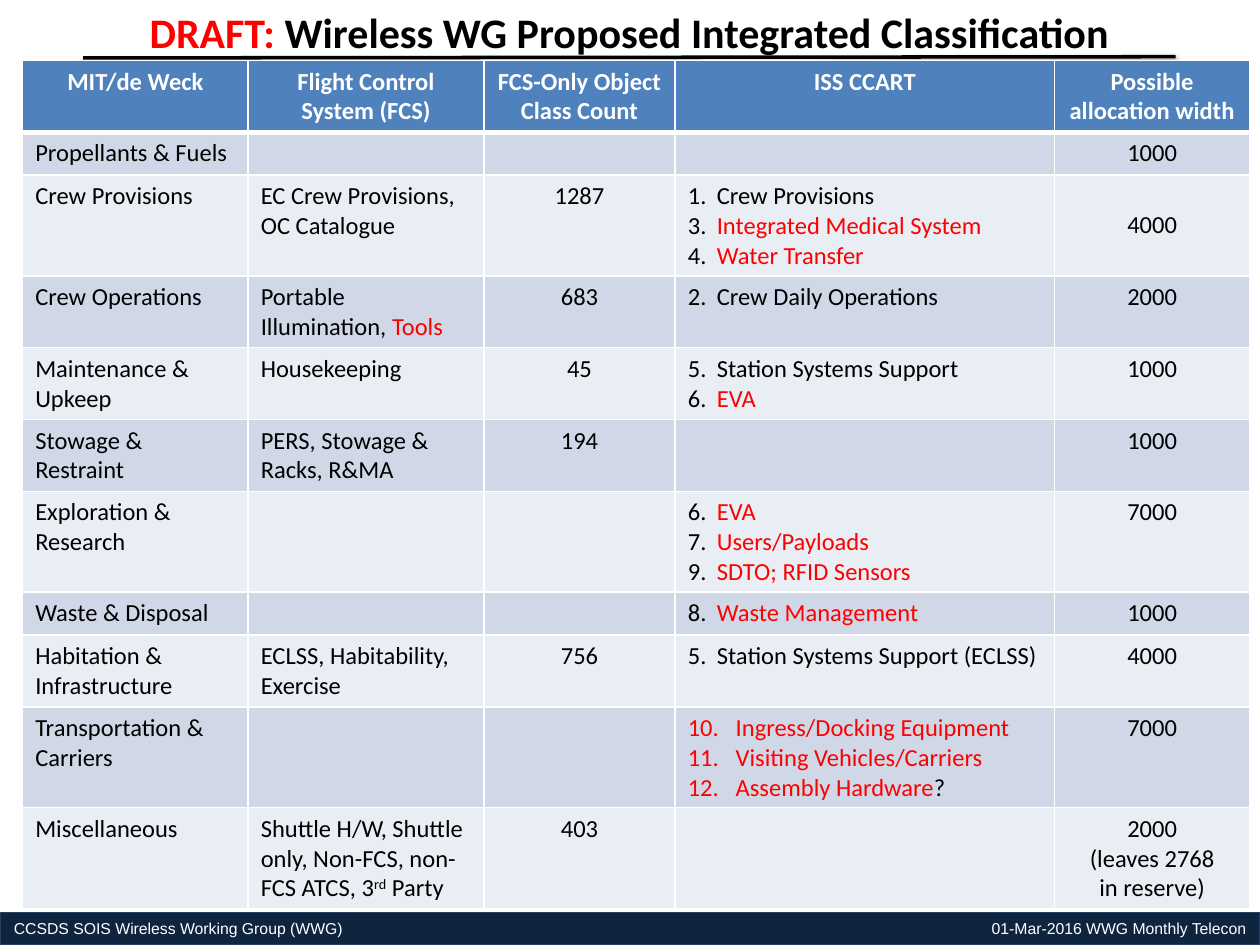
"""Build the slide that proposes an integrated wireless classification."""
from lxml.etree import SubElement
from pptx import Presentation
from pptx.dml.color import RGBColor
from pptx.enum.shapes import MSO_CONNECTOR, MSO_SHAPE
from pptx.enum.text import MSO_ANCHOR, PP_ALIGN
from pptx.oxml import parse_xml
from pptx.oxml.ns import nsdecls, qn
from pptx.util import Inches, Pt

BLACK = RGBColor(0x00, 0x00, 0x00)
WHITE = RGBColor(0xFF, 0xFF, 0xFF)
RED = RGBColor(0xFF, 0x00, 0x00)
NAVY = RGBColor(0x0F, 0x24, 0x3E)
NAVY_EDGE = RGBColor(0x25, 0x40, 0x61)
HEADER_BLUE = RGBColor(0x4F, 0x81, 0xBD)
BANDS = [RGBColor(0xE9, 0xED, 0xF4), RGBColor(0xD0, 0xD8, 0xE8)]

WIDTH, HEIGHT = Inches(10), Inches(7.5)
COLUMN_WIDTHS = [1.79, 1.87, 1.52, 3.01, 1.55]
COUNT, CCART, ALLOCATION = 2, 3, 4
LINE_HEIGHT, CELL_MARGIN = 0.23, 0.05
RED_MARK, SUPER_MARK = "!", "^"

HEADER = ["MIT/de Weck", "Flight Control System (FCS)", "FCS-Only Object Class Count",
          "ISS CCART", "Possible allocation width"]
ROWS = [
    (2, HEADER),
    (1, ["Propellants & Fuels", "", "", "", "1000"]),
    (3, ["Crew Provisions", "EC Crew Provisions, OC Catalogue", "1287",
         "1.\tCrew Provisions\n3.\t|!Integrated Medical System\n4.\t|!Water Transfer", "4000"]),
    (2, ["Crew Operations", "Portable Illumination, |!Tools", "683",
         "2.\tCrew Daily Operations", "2000"]),
    (2, ["Maintenance & Upkeep", "Housekeeping", "45",
         "5.\tStation Systems Support\n6.\t|!EVA", "1000"]),
    (2, ["Stowage & Restraint", "PERS, Stowage & Racks, R&MA", "194", "", "1000"]),
    (3, ["Exploration & Research", "", "",
         "6.\t|!EVA\n7.\t|!Users/Payloads\n9.\t|!SDTO; RFID Sensors", "7000"]),
    (1, ["Waste & Disposal", "", "", "8.\t|!Waste Management", "1000"]),
    (2, ["Habitation & Infrastructure", "ECLSS, Habitability, Exercise", "756",
         "5.\tStation Systems Support (ECLSS)", "4000"]),
    (3, ["Transportation & Carriers", "", "",
         "!Ingress/Docking Equipment\n!Visiting Vehicles/Carriers\n!Assembly Hardware|?", "7000"]),
    (3, ["Miscellaneous", "Shuttle H/W, Shuttle only, Non-FCS, non-FCS ATCS, 3|^rd| Party",
         "403", "", "2000\n(leaves 2768\nin reserve)"]),
]


def add_runs(paragraph, marked_text, size, color, bold=False, font="Calibri"):
    for piece in marked_text.split("|"):
        run = paragraph.add_run()
        run.text = piece.lstrip(RED_MARK + SUPER_MARK)
        run.font.name, run.font.size, run.font.bold = font, Pt(size), bold
        run.font.color.rgb = RED if piece.startswith(RED_MARK) else color
        if piece.startswith(SUPER_MARK):
            run.font._element.set("baseline", "30000")


def add_tab(paragraph, inches, alignment):
    tabs = SubElement(paragraph._p.get_or_add_pPr(), qn("a:tabLst"))
    SubElement(tabs, qn("a:tab"), pos=str(Inches(inches)), algn=alignment)


presentation = Presentation()
presentation.slide_width, presentation.slide_height = WIDTH, HEIGHT
slide = presentation.slides.add_slide(presentation.slide_layouts[6])

footer_height = Inches(0.26)
footer = slide.shapes.add_shape(MSO_SHAPE.RECTANGLE, 0, HEIGHT - footer_height, WIDTH, footer_height)
footer.shadow.inherit = False
footer.fill.solid()
footer.fill.fore_color.rgb = NAVY
footer.line.color.rgb = NAVY_EDGE
footer.line.width = Pt(0.75)
footer_frame = footer.text_frame
footer_frame.margin_left = footer_frame.margin_right = Inches(0.11)
footer_frame.margin_top = footer_frame.margin_bottom = Inches(0.06)
footer_frame.vertical_anchor = MSO_ANCHOR.MIDDLE
footer_line = footer_frame.paragraphs[0]
footer_line.alignment = PP_ALIGN.LEFT
add_tab(footer_line, 9.78, "r")
add_runs(footer_line, "CCSDS SOIS Wireless Working Group (WWG)\t01-Mar-2016 WWG Monthly Telecon",
         9, WHITE, font="Arial")

title = slide.shapes.add_textbox(Inches(1.06), 0, Inches(7.87), Inches(0.5))
title.text_frame.word_wrap = False
title_line = title.text_frame.paragraphs[0]
title_line.alignment = PP_ALIGN.CENTER
add_runs(title_line, "!DRAFT: |Wireless WG Proposed Integrated Classification", 24, BLACK, True)

underline = slide.shapes.add_connector(
    MSO_CONNECTOR.STRAIGHT, Inches(0.66), Inches(0.46), Inches(9.33), Inches(0.45))
underline.line.color.rgb = BLACK
underline.line.width = Pt(2)
underline._element.spPr.append(parse_xml(
    f'<a:effectLst {nsdecls("a")}><a:outerShdw blurRad="{Pt(3.1)}" dist="{Pt(1.6)}" dir="5400000" '
    'rotWithShape="0"><a:srgbClr val="000000"><a:alpha val="38000"/></a:srgbClr>'
    '</a:outerShdw></a:effectLst>'))

table = slide.shapes.add_table(
    len(ROWS), len(COLUMN_WIDTHS), Inches(0.18), Inches(0.48), Inches(9.73), Inches(6.72)).table
table.horz_banding = False
for column, width in zip(table.columns, COLUMN_WIDTHS):
    column.width = Inches(width)

for row_index, (line_count, texts) in enumerate(ROWS):
    is_header = row_index == 0
    row = table.rows[row_index]
    row.height = Inches(2 * CELL_MARGIN + LINE_HEIGHT * line_count + 0.01)
    for column_index, (cell, text) in enumerate(zip(row.cells, texts)):
        cell.fill.solid()
        cell.fill.fore_color.rgb = HEADER_BLUE if is_header else BANDS[row_index % 2]
        if texts[0] == "Crew Provisions" and column_index == ALLOCATION:
            cell.margin_top = Inches(CELL_MARGIN + LINE_HEIGHT)
        for line_index, line in enumerate(text.split("\n")):
            frame = cell.text_frame
            paragraph = frame.add_paragraph() if line_index else frame.paragraphs[0]
            if is_header or column_index in (COUNT, ALLOCATION):
                paragraph.alignment = PP_ALIGN.CENTER
            if "\t" in line:
                add_tab(paragraph, 0.23, "l")
            elif column_index == CCART and line and not is_header:
                properties = paragraph._p.get_or_add_pPr()
                properties.set("marL", str(Inches(0.38)))
                properties.set("indent", str(-Inches(0.38)))
                SubElement(properties, qn("a:buAutoNum"), type="arabicPeriod", startAt="10")
            if line:
                add_runs(paragraph, line, 14, WHITE if is_header else BLACK, is_header)
            else:
                SubElement(paragraph._p, qn("a:endParaRPr"), sz="1400")
        borders = [("L", 1), ("R", 1), ("T", 3 if row_index == 1 else 1), ("B", 3 if is_header else 1)]
        for position, (side, points) in enumerate(borders):
            cell._tc.get_or_add_tcPr().insert(position, parse_xml(
                f'<a:ln{side} {nsdecls("a")} w="{Pt(points)}"><a:solidFill>'
                f'<a:srgbClr val="{WHITE}"/></a:solidFill></a:ln{side}>'))

presentation.save("out.pptx")
